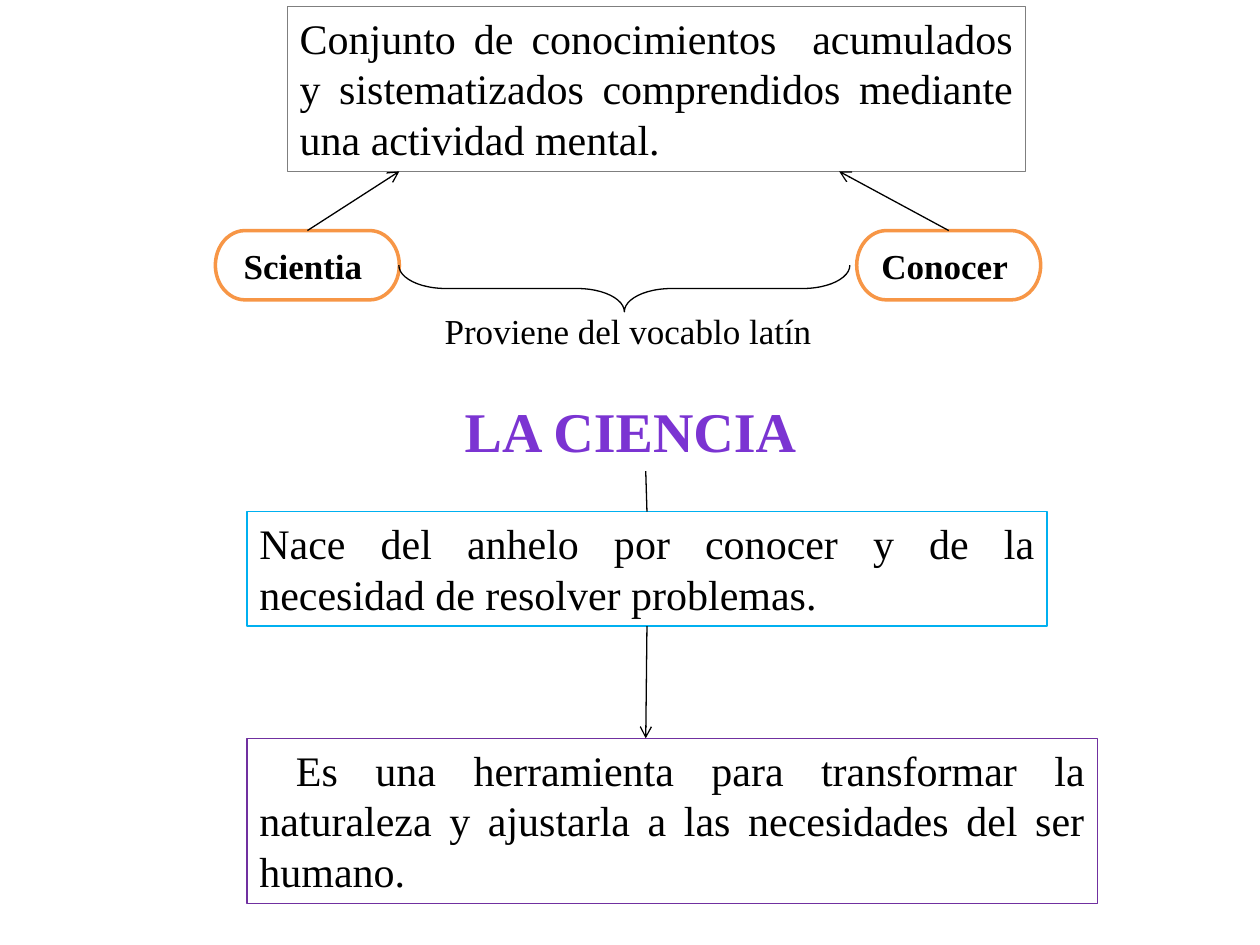
from lxml import etree
from pptx import Presentation
from pptx.dml.color import RGBColor
from pptx.enum.shapes import MSO_CONNECTOR, MSO_SHAPE
from pptx.enum.text import MSO_ANCHOR, PP_ALIGN
from pptx.oxml.ns import qn
from pptx.util import Inches, Pt

RECTANGLE = MSO_SHAPE.RECTANGLE
TERMINATOR = MSO_SHAPE.FLOWCHART_TERMINATOR
BRACE = MSO_SHAPE.RIGHT_BRACE
STRAIGHT = MSO_CONNECTOR.STRAIGHT
LEFT, CENTER, JUSTIFY = PP_ALIGN.LEFT, PP_ALIGN.CENTER, PP_ALIGN.JUSTIFY
TOP, MIDDLE = MSO_ANCHOR.TOP, MSO_ANCHOR.MIDDLE

BLACK = RGBColor(0x00, 0x00, 0x00)
WHITE = RGBColor(0xFF, 0xFF, 0xFF)
GRAY = RGBColor(0x7F, 0x7F, 0x7F)
BLUE = RGBColor(0x00, 0xB0, 0xF0)
PURPLE = RGBColor(0x70, 0x30, 0xA0)
VIOLET = RGBColor(0x7B, 0x34, 0xD2)
ORANGE = RGBColor(0xF7, 0x96, 0x46)
FONT = "Times New Roman"
THIN = 0.75

# Content: text, (left, top, width, height), colour, and size or first-line indent
STATEMENTS = [
    ("Conjunto de conocimientos  acumulados y sistematizados comprendidos "
     "mediante una actividad mental.", (2.28, 0.05, 5.86, 1.31), GRAY, 0),
    ("Nace del anhelo por conocer y de la necesidad de resolver problemas.",
     (1.96, 4.06, 6.35, 0.91), BLUE, 0),
    ("Es una herramienta para transformar la naturaleza y ajustarla a las "
     "necesidades del ser humano.", (1.96, 5.86, 6.75, 1.31), PURPLE, 0.29),
]
LABELS = [
    ("LA CIENCIA", (3.59, 3.1, 3.07, 0.64), VIOLET, 32, True),
    ("Proviene del vocablo latín", (3.43, 2.41, 3.32, 0.44), BLACK, 20, False),
]
# Term, left edge, x where its arrow meets the definition
TERMS = [("Scientia ", 1.71, 3.17), ("Conocer ", 6.8, 6.66)]
TERM_TOP, TERM_WIDTH, TERM_HEIGHT = 1.83, 1.46, 0.55
BRACE_FRAME = (4.77, 0.5, 0.37, 3.58)

prs = Presentation()
prs.slide_width, prs.slide_height = Inches(10), Inches(7.5)
slide = prs.slides.add_slide(prs.slide_layouts[6])
shapes = slide.shapes


def write(box, text, size, color=BLACK, bold=False, align=LEFT, anchor=TOP):
    frame = box.text_frame
    frame.text = text
    frame.word_wrap = True
    frame.vertical_anchor = anchor
    paragraph = frame.paragraphs[0]
    paragraph.alignment = align
    font = paragraph.runs[0].font
    font.name, font.size, font.bold = FONT, Pt(size), bold
    font.color.rgb = color
    return paragraph


def add_outline(kind, frame, color, width, fill=None):
    shape = shapes.add_shape(kind, *map(Inches, frame))
    shape.shadow.inherit = False
    if fill is None:
        shape.fill.background()
    else:
        shape.fill.solid()
        shape.fill.fore_color.rgb = fill
    shape.line.color.rgb = color
    shape.line.width = Pt(width)
    return shape


def add_link(start, end, arrow=True):
    link = shapes.add_connector(STRAIGHT, *map(Inches, start + end))
    link.line.color.rgb = BLACK
    link.line.width = Pt(THIN)
    if arrow:
        etree.SubElement(link.line._get_or_add_ln(), qn("a:tailEnd"), type="arrow")
    etree.SubElement(link._element.spPr, qn("a:effectLst"))


# Framed statements
for text, frame, color, indent in STATEMENTS:
    box = add_outline(RECTANGLE, frame, color, THIN)
    paragraph = write(box, text, 24, align=JUSTIFY)
    if indent:
        paragraph._p.get_or_add_pPr().set("indent", str(Inches(indent)))

# Title and origin label
for text, frame, color, size, bold in LABELS:
    write(shapes.add_textbox(*map(Inches, frame)), text, size, color, bold)

# Latin terms, each with an arrow to the definition
_, definition_top, _, definition_height = STATEMENTS[0][1]
definition_bottom = definition_top + definition_height
for term, left, target in TERMS:
    pill = add_outline(TERMINATOR, (left, TERM_TOP, TERM_WIDTH, TERM_HEIGHT),
                       ORANGE, 2, WHITE)
    write(pill, term, 20, bold=True, align=CENTER, anchor=MIDDLE)
    add_link((left + TERM_WIDTH / 2, TERM_TOP), (target, definition_bottom))

# Brace joining the two terms
brace = add_outline(BRACE, BRACE_FRAME, BLACK, THIN)
brace.rotation = 90
brace.adjustments[0], brace.adjustments[1] = 1.01, 0.5

# Title to origin, origin to purpose
_, title_top, title_width, title_height = LABELS[0][1]
title_x = LABELS[0][1][0] + title_width / 2
origin_left, origin_top, origin_width, origin_height = STATEMENTS[1][1]
origin_x = origin_left + origin_width / 2
add_link((title_x, title_top + title_height), (origin_x, origin_top), arrow=False)
add_link((origin_x, origin_top + origin_height), (title_x, STATEMENTS[2][1][1]))

prs.save("out.pptx")
